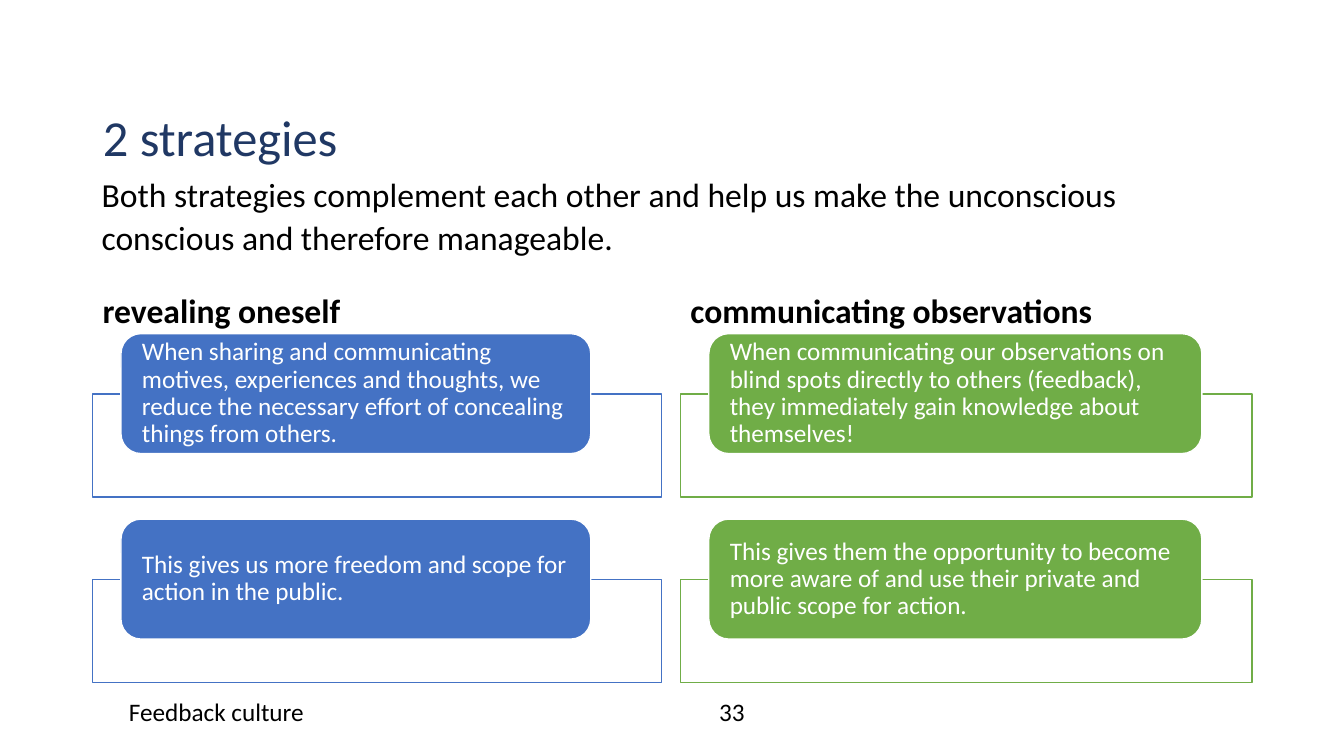
from dataclasses import dataclass

from lxml import etree
from pptx import Presentation
from pptx import util as u
from pptx.dml.color import RGBColor
from pptx.enum import shapes, text
from pptx.oxml.ns import qn

PX = 9144


@dataclass(frozen=True)
class Theme:
    font: str = "Calibri"
    white: str = "FFFFFF"
    black: str = "000000"
    navy: str = "203864"
    blue: str = "4472C4"
    green: str = "70AD47"
    title: int = 36
    lead: int = 24
    small: int = 18


THEME = Theme()
CARD_TOPS = (331, 515)
COLUMNS = (
    (92, 564, 466, THEME.blue, "revealing oneself", (
        "When sharing and communicating motives, experiences and thoughts, "
        "we reduce the necessary effort of concealing things from others.",
        "This gives us more freedom and scope for action in the public.",
    )),
    (675, 567, 489, THEME.green, "communicating observations", (
        "When communicating our observations on blind spots directly to others "
        "(feedback), they immediately gain knowledge about themselves!",
        "This gives them the opportunity to become more aware of and use their "
        "private and public scope for action.",
    )),
)


def emu(*lengths):
    return [u.Emu(n * PX) for n in lengths]


def rgb(value):
    return RGBColor.from_string(value)


def write(sp, words, size, color, bold=False, spacing=1.0,
          align=text.PP_ALIGN.LEFT, anchor=text.MSO_ANCHOR.TOP):
    tf = sp.text_frame
    tf.word_wrap = True
    tf.vertical_anchor = anchor
    tf.text = words
    p = tf.paragraphs[0]
    p.alignment = align
    p.line_spacing = spacing
    font = p.runs[0].font
    font.name = THEME.font
    font.size = u.Pt(size)
    font.bold = bold
    font.color.rgb = rgb(color)


def add_title(s, words, left, top, width, height):
    sp = s.shapes.title
    sp.left, sp.top, sp.width, sp.height = emu(left, top, width, height)
    write(sp, words, THEME.title, THEME.navy, spacing=0.9)


def add_label(s, words, box, size, **style):
    sp = s.shapes.add_textbox(*emu(*box))
    write(sp, words, size, THEME.black, **style)


def add_box(s, kind, box, fill, line):
    sp = s.shapes.add_shape(kind, *emu(*box))
    sp.shadow.inherit = False
    sp.fill.solid()
    sp.fill.fore_color.rgb = rgb(fill)
    sp.line.color.rgb = rgb(line)
    sp.line.width = u.Pt(1)
    return sp


def add_card(s, words, left, top, frame_width, card_width, color):
    frame = add_box(s, shapes.MSO_SHAPE.RECTANGLE,
                    (left, top + 60, frame_width, 102), THEME.white, color)
    fill = frame.fill._xPr.find(qn("a:solidFill"))
    etree.SubElement(fill[0], qn("a:alpha"), val="90000")
    card = add_box(s, shapes.MSO_SHAPE.ROUNDED_RECTANGLE,
                   (left + 28, top, card_width, 119), color, THEME.white)
    tf = card.text_frame
    tf.margin_left, tf.margin_right, tf.margin_top, tf.margin_bottom = emu(15, 15, 0, 0)
    write(card, words, THEME.small, THEME.white, spacing=0.9,
          anchor=text.MSO_ANCHOR.MIDDLE)


def add_column(s, left, width, card_width, color, heading, cards):
    add_label(s, heading, (left, 243, width, 90), THEME.lead, bold=True,
              spacing=0.9, anchor=text.MSO_ANCHOR.BOTTOM)
    for top, words in zip(CARD_TOPS, cards):
        add_card(s, words, left, top, width, card_width, color)


def main():
    prs = Presentation()
    prs.slide_width, prs.slide_height = emu(1333, 750)
    s = prs.slides.add_slide(prs.slide_layouts[5])
    add_title(s, "2 strategies", 92, 107, 1150, 97)
    add_label(s, "Both strategies complement each other and help us make the "
              "unconscious conscious and therefore manageable.",
              (91, 165, 1150, 95), THEME.lead, spacing=1.07)
    for column in COLUMNS:
        add_column(s, *column)
    add_label(s, "Feedback culture", (118, 686, 450, 40), THEME.small)
    add_label(s, "33", (576, 686, 300, 40), THEME.small, align=text.PP_ALIGN.CENTER)
    prs.save("out.pptx")


if __name__ == "__main__":
    main()
